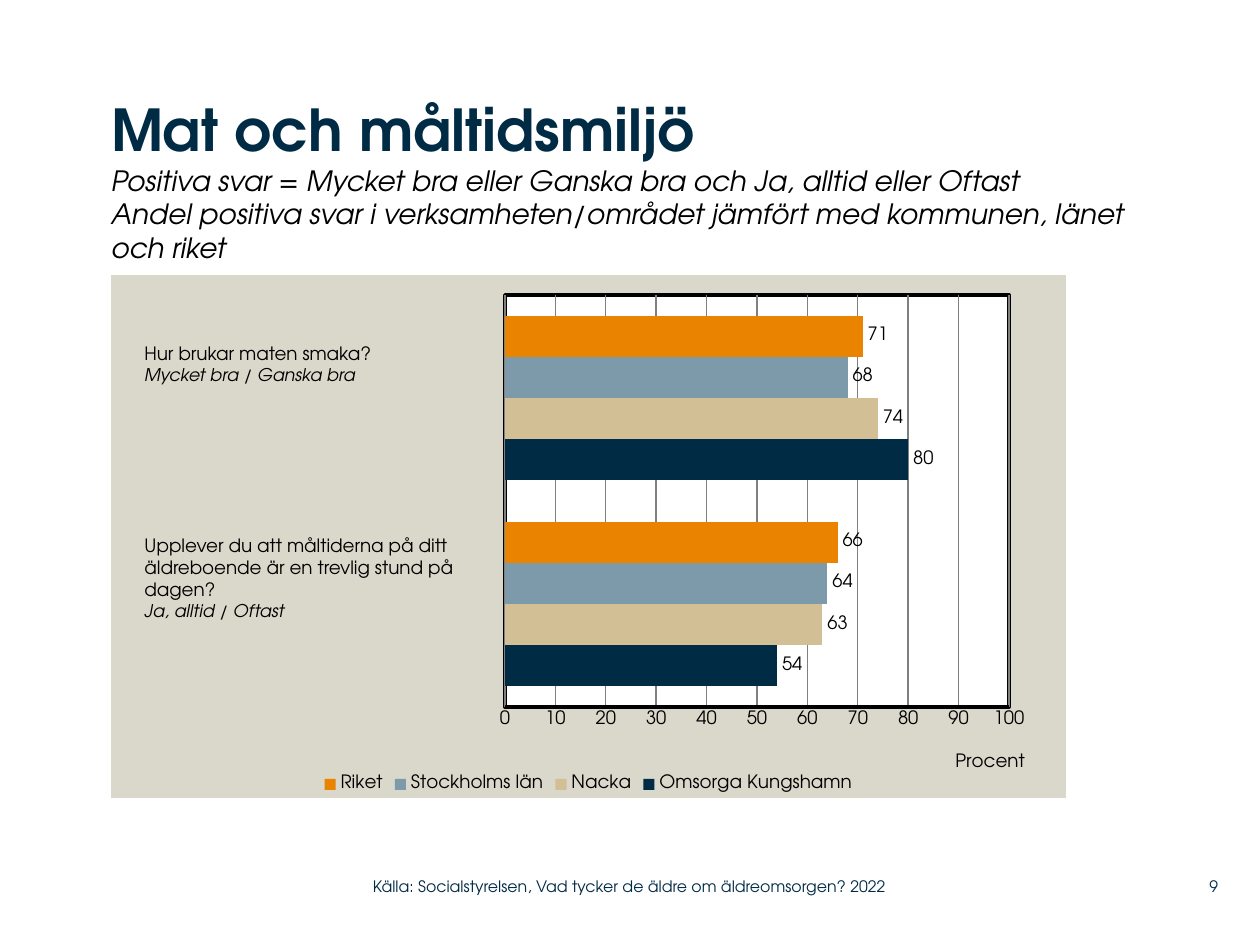
from dataclasses import dataclass

from lxml import etree
from pptx import Presentation
from pptx.chart.data import CategoryChartData
from pptx.dml.color import RGBColor
from pptx.enum.chart import XL_CHART_TYPE, XL_LABEL_POSITION, XL_LEGEND_POSITION, XL_TICK_MARK
from pptx.enum.text import MSO_ANCHOR, MSO_AUTO_SIZE, PP_ALIGN
from pptx.oxml import parse_xml
from pptx.oxml.ns import nsdecls, qn
from pptx.util import Emu, Pt

BAR_CLUSTERED = XL_CHART_TYPE.BAR_CLUSTERED
OUTSIDE_END = XL_LABEL_POSITION.OUTSIDE_END
LEGEND_BOTTOM = XL_LEGEND_POSITION.BOTTOM
NO_TICKS = XL_TICK_MARK.NONE
TOP, MIDDLE = MSO_ANCHOR.TOP, MSO_ANCHOR.MIDDLE
LEFT, RIGHT = PP_ALIGN.LEFT, PP_ALIGN.RIGHT
NO_FIT, GROW = MSO_AUTO_SIZE.NONE, MSO_AUTO_SIZE.SHAPE_TO_FIT_TEXT

EMU_PER_PX = 914400 / 126
CHART_WIDTH, CHART_HEIGHT = 955, 523
FONT = "TeX Gyre Adventor"
COLORS = {
    "navy": "002B45", "sand": "D3BF96", "steel": "7D9AAA", "orange": "E98300",
    "panel": "DAD7CB", "white": "FFFFFF", "black": "000000", "grid": "808080",
}


@dataclass
class Area:
    """Compared area with its share of positive answers per question, bottom up."""
    name: str
    values: tuple[int, int]
    color: str


@dataclass
class Question:
    lines: tuple[str, ...]
    positive_answers: str
    top: int
    height: int


AREAS = [
    Area("Omsorga Kungshamn", (54, 80), "navy"),
    Area("Nacka", (63, 74), "sand"),
    Area("Stockholms län", (64, 68), "steel"),
    Area("Riket", (66, 71), "orange"),
]
QUESTIONS = [
    Question(("Hur brukar maten smaka?",), "Mycket bra / Ganska bra", 336, 79),
    Question(("Upplever du att måltiderna på ditt äldreboende är en trevlig stund på", "dagen?"),
             "Ja, alltid / Oftast", 528, 123),
]


def px(length: int) -> Emu:
    return Emu(round(length * EMU_PER_PX))


def rgb(color: str) -> RGBColor:
    return RGBColor.from_string(COLORS[color])


def style_font(font, size: float, color: str = "black", bold: bool = False, italic: bool = False) -> None:
    font.name, font.size, font.bold, font.italic = FONT, Pt(size), bold, italic
    font.color.rgb = rgb(color)


def add_text(paragraph, text: str, *, align=LEFT, **style) -> None:
    paragraph.alignment = align
    run = paragraph.add_run()
    run.text = text
    style_font(run.font, **style)


def set_frame(frame, *, anchor=TOP, inset: bool = False, fit=NO_FIT) -> None:
    frame.word_wrap, frame.auto_size, frame.vertical_anchor = True, fit, anchor
    if not inset:
        frame.margin_left = frame.margin_top = frame.margin_right = frame.margin_bottom = 0


def add_box(slide, left: int, top: int, width: int, height: int, **frame_format):
    frame = slide.shapes.add_textbox(px(left), px(top), px(width), px(height)).text_frame
    set_frame(frame, **frame_format)
    return frame


def fill_title(slide) -> None:
    title = slide.shapes.title
    title.left, title.top, title.width, title.height = px(111), px(94), px(1061), px(181)
    set_frame(title.text_frame)
    paragraph = title.text_frame.paragraphs[0]
    paragraph.line_spacing = 1.0
    add_text(paragraph, "Mat och måltidsmiljö", size=33, color="navy", bold=True)
    for line in ("Positiva svar = Mycket bra eller Ganska bra och Ja, alltid eller Oftast",
                 "Andel positiva svar i verksamheten/området jämfört med kommunen, länet och riket"):
        paragraph.add_line_break()
        add_text(paragraph, line, size=16, italic=True)


def set_layout(parent, position: int, x: int, y: int, size: tuple[int, int] | None = None) -> None:
    """Place a chart part by hand, in px from the chart's top left corner."""
    for old in parent.findall(qn("c:layout")):
        parent.remove(old)
    values = {"xMode": "edge", "yMode": "edge", "x": x / CHART_WIDTH, "y": y / CHART_HEIGHT}
    if size:
        values = {"layoutTarget": "inner", **values,
                  "w": size[0] / CHART_WIDTH, "h": size[1] / CHART_HEIGHT}
    layout = parse_xml(f"<c:layout {nsdecls('c')}><c:manualLayout/></c:layout>")
    for tag, value in values.items():
        etree.SubElement(layout[0], qn(f"c:{tag}")).set("val", str(value))
    parent.insert(position, layout)


def shape_properties(fill: str, line: str = ""):
    outline = (f'<a:ln w="25400"><a:solidFill><a:srgbClr val="{COLORS[line]}"/></a:solidFill></a:ln>'
               if line else "<a:ln><a:noFill/></a:ln>")
    return parse_xml(f'<c:spPr {nsdecls("c", "a")}><a:solidFill><a:srgbClr val="{COLORS[fill]}"/>'
                     f"</a:solidFill>{outline}</c:spPr>")


def format_value_axis(axis) -> None:
    axis.minimum_scale, axis.maximum_scale, axis.major_unit = 0, 100, 10
    axis.major_tick_mark = axis.minor_tick_mark = NO_TICKS
    axis.format.line.color.rgb, axis.format.line.width = rgb("black"), Pt(2)
    grid_line = axis.major_gridlines.format.line
    grid_line.color.rgb, grid_line.width = rgb("grid"), Pt(0.75)
    style_font(axis.tick_labels.font, 10.5)
    add_text(axis.axis_title.text_frame.paragraphs[0], "Procent", size=10.5)
    set_layout(axis.axis_title._element, 1, 841, 474)


def add_comparison_chart(slide) -> None:
    data = CategoryChartData()
    data.categories = ["1", "2"]
    for area in AREAS:
        data.add_series(area.name, area.values)
    chart = slide.shapes.add_chart(BAR_CLUSTERED, px(111), px(275),
                                   px(CHART_WIDTH), px(CHART_HEIGHT), data).chart
    style_font(chart.font, 10.5)
    chart.has_title = False
    chart.has_legend = True
    chart.legend.position, chart.legend.include_in_layout = LEGEND_BOTTOM, False
    style_font(chart.legend.font, 10.5)
    chart.category_axis.visible = False
    format_value_axis(chart.value_axis)

    plot = chart.plots[0]
    plot.gap_width, plot.overlap, plot.vary_by_categories = 100, 0, False
    for area, series in zip(AREAS, plot.series):
        series.format.fill.solid()
        series.format.fill.fore_color.rgb = rgb(area.color)
        labels = series.data_labels
        labels.show_value, labels.position = True, OUTSIDE_END
        style_font(labels.font, 10.5)

    plot_area = chart._chartSpace.chart.plotArea
    set_layout(plot_area, 0, 394, 20, size=(504, 412))
    plot_area.append(shape_properties("white", "black"))
    chart._chartSpace.chart.addnext(shape_properties("panel"))


def add_question(slide, question: Question) -> None:
    frame = add_box(slide, 132, question.top, 349, question.height, inset=True, fit=GROW)
    add_text(frame.paragraphs[0], question.lines[0], size=10.5)
    for line in question.lines[1:]:
        add_text(frame.add_paragraph(), line, size=10.5)
    add_text(frame.add_paragraph(), question.positive_answers, size=10, italic=True)


def main() -> None:
    deck = Presentation()
    deck.slide_width, deck.slide_height = px(1260), px(945)
    slide = deck.slides.add_slide(deck.slide_layouts[5])
    fill_title(slide)
    add_comparison_chart(slide)
    for question in QUESTIONS:
        add_question(slide, question)
    source = add_box(slide, 373, 868, 558, 37, anchor=MIDDLE)
    add_text(source.paragraphs[0], "Källa: Socialstyrelsen, Vad tycker de äldre om äldreomsorgen? 2022",
             size=9, color="navy")
    page_number = add_box(slide, 1159, 868, 59, 37, anchor=MIDDLE)
    add_text(page_number.paragraphs[0], "9", size=9, color="navy", align=RIGHT)
    deck.save("out.pptx")


if __name__ == "__main__":
    main()
